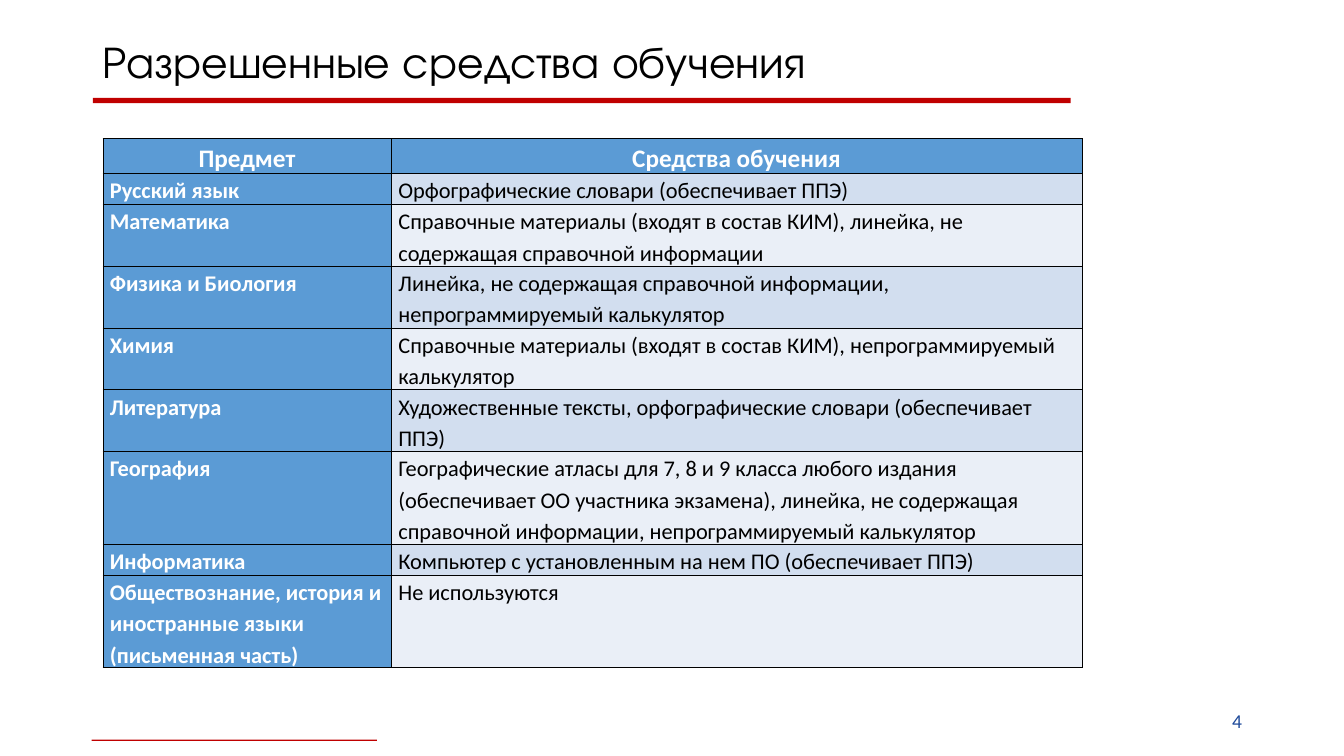
from lxml import etree
from pptx import Presentation
from pptx.dml.color import RGBColor
from pptx.enum.shapes import MSO_SHAPE
from pptx.enum.text import MSO_ANCHOR, PP_ALIGN
from pptx.oxml.ns import qn
from pptx.util import Cm, Pt

RECTANGLE = MSO_SHAPE.RECTANGLE
MIDDLE = MSO_ANCHOR.MIDDLE
LEFT, CENTER, RIGHT = PP_ALIGN.LEFT, PP_ALIGN.CENTER, PP_ALIGN.RIGHT

BLACK = RGBColor(0x00, 0x00, 0x00)
WHITE = RGBColor(0xFF, 0xFF, 0xFF)
RED = RGBColor(0xC0, 0x00, 0x00)
NAVY = RGBColor(0x1D, 0x49, 0x99)
BLUE = RGBColor(0x5B, 0x9B, 0xD5)
BAND_DARK = RGBColor(0xD2, 0xDE, 0xEF)
BAND_LIGHT = RGBColor(0xEA, 0xEF, 0xF7)

TITLE_FONT = "TeX Gyre Adventor"
BODY_FONT = "Calibri"

COLUMN_WIDTHS = (7.27, 17.4)
ROW_HEIGHT = 0.76
HEADINGS = ("Предмет", "Средства обучения")
SUBJECTS = (
    ("Русский язык", "Орфографические словари (обеспечивает ППЭ)"),
    ("Математика",
     "Справочные материалы (входят в состав КИМ), линейка, не содержащая справочной информации"),
    ("Физика и Биология",
     "Линейка, не содержащая справочной информации, непрограммируемый калькулятор"),
    ("Химия",
     "Справочные материалы (входят в состав КИМ), непрограммируемый калькулятор"),
    ("Литература",
     "Художественные тексты, орфографические словари (обеспечивает ППЭ)"),
    ("География",
     "Географические атласы для 7, 8 и 9 класса любого издания "
     "(обеспечивает ОО участника экзамена), линейка, не содержащая "
     "справочной информации, непрограммируемый калькулятор"),
    ("Информатика", "Компьютер с установленным на нем ПО (обеспечивает ППЭ)"),
    ("Обществознание, история и иностранные языки (письменная часть)",
     "Не используются"),
)


def write(frame, text, font, size, color, align=LEFT, spacing=1.0, bold=False):
    frame.text = text
    frame.word_wrap = True
    paragraph = frame.paragraphs[0]
    paragraph.alignment = align
    paragraph.line_spacing = spacing
    for run in paragraph.runs:
        run.font.name = font
        run.font.size = Pt(size)
        run.font.bold = bold
        run.font.color.rgb = color


def add_rule(slide, left, top, width, height):
    rule = slide.shapes.add_shape(RECTANGLE, Cm(left), Cm(top), Cm(width), Cm(height))
    rule.shadow.inherit = False
    rule.fill.solid()
    rule.fill.fore_color.rgb = RED
    rule.line.fill.background()


def add_label(slide, left, top, width, height, text, font, size, color, **style):
    label = slide.shapes.add_textbox(Cm(left), Cm(top), Cm(width), Cm(height))
    label.text_frame.vertical_anchor = MIDDLE
    write(label.text_frame, text, font, size, color, **style)


def outline_cell(cell):
    properties = cell._tc.get_or_add_tcPr()
    for position, side in enumerate(("a:lnL", "a:lnR", "a:lnT", "a:lnB")):
        border = etree.Element(qn(side), w=str(Pt(0.25)))
        fill = etree.SubElement(border, qn("a:solidFill"))
        etree.SubElement(fill, qn("a:srgbClr"), val=str(BLACK))
        properties.insert(position, border)


def fill_cell(cell, text, fill, size, color, align, bold):
    cell.margin_left = cell.margin_right = Cm(0.18)
    cell.margin_top = cell.margin_bottom = 0
    cell.fill.solid()
    cell.fill.fore_color.rgb = fill
    outline_cell(cell)
    write(cell.text_frame, text, BODY_FONT, size, color, align, 1.15, bold)


def add_subject_table(slide, left, top):
    row_count = len(SUBJECTS) + 1
    table = slide.shapes.add_table(
        row_count, len(HEADINGS), Cm(left), Cm(top),
        Cm(sum(COLUMN_WIDTHS)), Cm(ROW_HEIGHT * row_count)).table
    for column, width in zip(table.columns, COLUMN_WIDTHS):
        column.width = Cm(width)
    for row in table.rows:
        row.height = Cm(ROW_HEIGHT)
    for index, heading in enumerate(HEADINGS):
        fill_cell(table.cell(0, index), heading, BLUE, 18, WHITE, CENTER, True)
    for index, (subject, tools) in enumerate(SUBJECTS, start=1):
        band = BAND_DARK if index % 2 else BAND_LIGHT
        fill_cell(table.cell(index, 0), subject, BLUE, 16, WHITE, LEFT, True)
        fill_cell(table.cell(index, 1), tools, band, 16, BLACK, LEFT, False)


def main():
    presentation = Presentation()
    presentation.slide_width = Cm(33.87)
    presentation.slide_height = Cm(19.05)
    slide = presentation.slides.add_slide(presentation.slide_layouts[6])
    add_rule(slide, 2.34, 2.47, 24.64, 0.13)
    add_rule(slide, 2.31, 18.64, 7.19, 0.03)
    add_label(slide, 23.93, 17.65, 7.62, 1.01, "4", BODY_FONT, 14, NAVY, align=RIGHT)
    add_label(slide, 2.34, 0.61, 29.21, 2.01, "Разрешенные средства обучения",
              TITLE_FONT, 32, BLACK, spacing=0.9)
    add_subject_table(slide, 2.59, 3.49)
    presentation.save("out.pptx")


if __name__ == "__main__":
    main()
